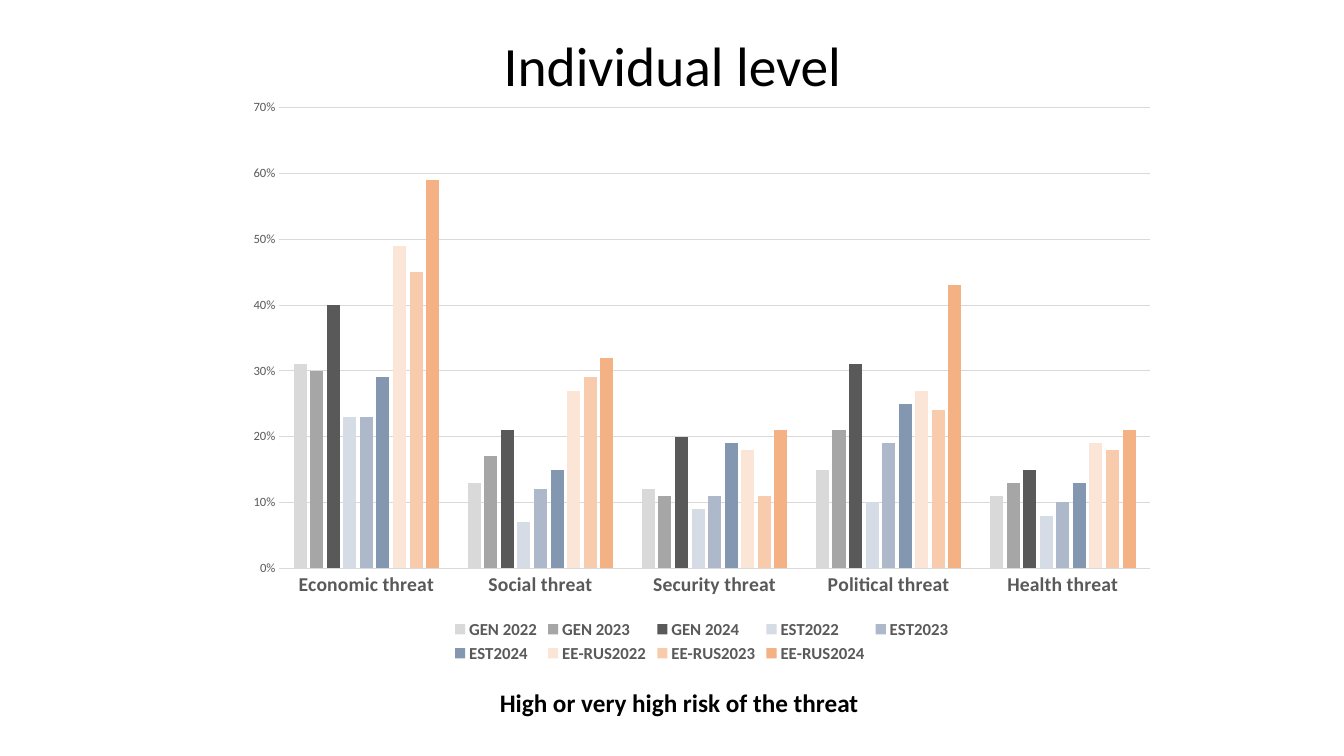
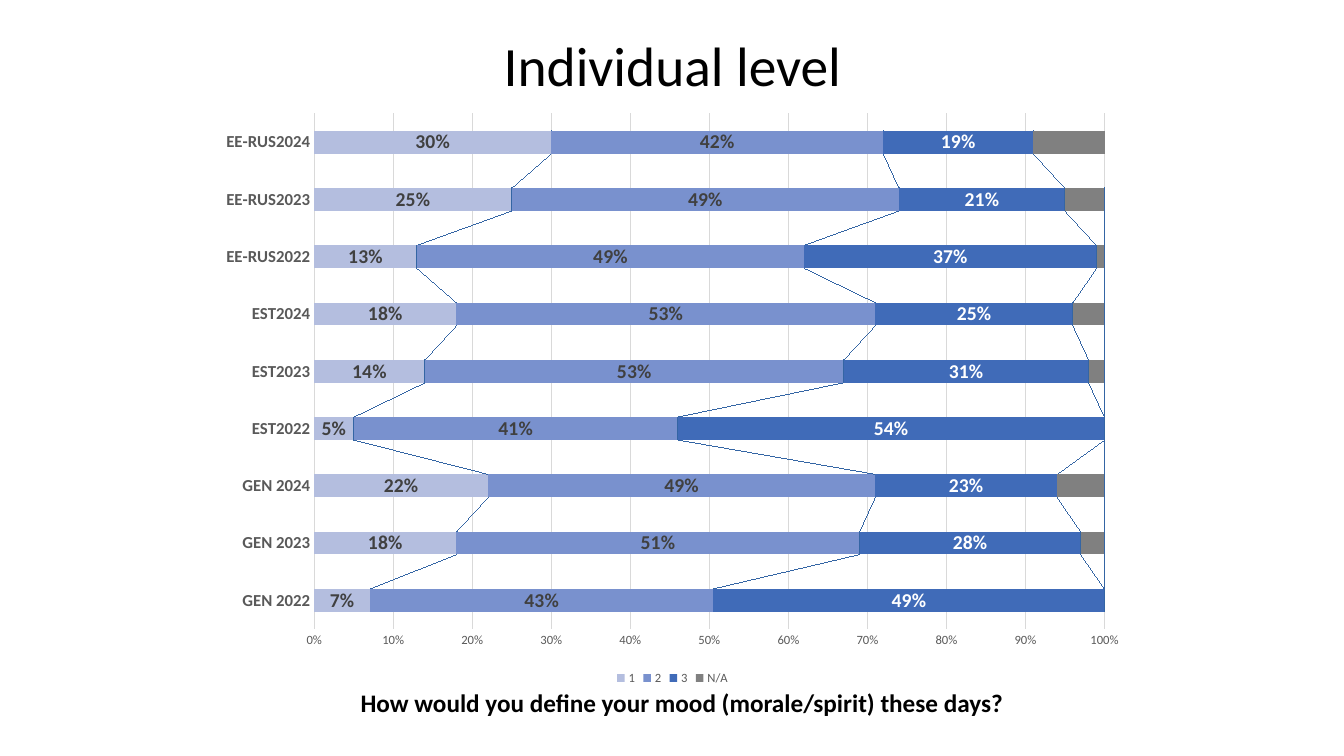
"""Build two slides that chart threat perception and mood at the individual level."""
from lxml import etree
from pptx import Presentation
from pptx.chart.data import CategoryChartData
from pptx.dml.color import RGBColor
from pptx.enum.chart import XL_CHART_TYPE, XL_LEGEND_POSITION, XL_TICK_MARK
from pptx.enum.text import MSO_ANCHOR, MSO_AUTO_SIZE, PP_ALIGN
from pptx.oxml import parse_xml
from pptx.oxml.ns import nsdecls, qn
from pptx.util import Inches, Pt

COLUMNS = XL_CHART_TYPE.COLUMN_CLUSTERED
STACKED_BARS = XL_CHART_TYPE.BAR_STACKED_100
LEGEND_BOTTOM = XL_LEGEND_POSITION.BOTTOM
NO_TICK = XL_TICK_MARK.NONE
MIDDLE, TOP = MSO_ANCHOR.MIDDLE, MSO_ANCHOR.TOP
GROW = MSO_AUTO_SIZE.SHAPE_TO_FIT_TEXT
CENTER = PP_ALIGN.CENTER

FONT = "Calibri"
PERCENT = "0%"
BLACK = RGBColor(0x00, 0x00, 0x00)
WHITE = RGBColor(0xFF, 0xFF, 0xFF)
AXIS_TEXT = RGBColor(0x59, 0x59, 0x59)
LABEL_DARK = RGBColor(0x40, 0x40, 0x40)
GRID = RGBColor(0xD9, 0xD9, 0xD9)
SERIES_LINE = RGBColor(0x2E, 0x62, 0xA6)

GROUP_COLORS = {
    "GEN ": (GRID, RGBColor(0xA6, 0xA6, 0xA6), AXIS_TEXT),
    "EST": (RGBColor(0xD6, 0xDC, 0xE5), RGBColor(0xAD, 0xB9, 0xCA), RGBColor(0x84, 0x97, 0xB0)),
    "EE-RUS": (RGBColor(0xFB, 0xE5, 0xD6), RGBColor(0xF8, 0xCB, 0xAD), RGBColor(0xF4, 0xB1, 0x83)),
}
YEARS = (2022, 2023, 2024)
WAVES = [f"{group}{year}" for group in GROUP_COLORS for year in YEARS]
WAVE_COLORS = [color for colors in GROUP_COLORS.values() for color in colors]

THREATS = ["Economic threat", "Social threat", "Security threat",
           "Political threat", "Health threat"]
THREAT_VALUES = [
    (0.31, 0.13, 0.12, 0.15, 0.11),
    (0.30, 0.17, 0.11, 0.21, 0.13),
    (0.40, 0.21, 0.20, 0.31, 0.15),
    (0.23, 0.07, 0.09, 0.10, 0.08),
    (0.23, 0.12, 0.11, 0.19, 0.10),
    (0.29, 0.15, 0.19, 0.25, 0.13),
    (0.49, 0.27, 0.18, 0.27, 0.19),
    (0.45, 0.29, 0.11, 0.24, 0.18),
    (0.59, 0.32, 0.21, 0.43, 0.21),
]
MOODS = ["1", "2", "3", "N/A"]
MOOD_VALUES = [
    (0.07, 0.18, 0.22, 0.05, 0.14, 0.18, 0.13, 0.25, 0.30),
    (0.43, 0.51, 0.49, 0.41, 0.53, 0.53, 0.49, 0.49, 0.42),
    (0.49, 0.28, 0.23, 0.54, 0.31, 0.25, 0.37, 0.21, 0.19),
    (0, 0.03, 0.06, 0, 0.02, 0.04, 0.01, 0.05, 0.09),
]
MOOD_COLORS = [RGBColor(0xB4, 0xBE, 0xDF), RGBColor(0x79, 0x91, 0xCE),
               RGBColor(0x40, 0x6B, 0xB8), RGBColor(0x80, 0x80, 0x80)]
MOOD_LABEL_COLORS = [LABEL_DARK, LABEL_DARK, WHITE]


class Deck:
    """Hold the shared style and the current slide."""

    def __init__(self):
        self.presentation = Presentation()
        self.presentation.slide_width = Inches(13.33)
        self.presentation.slide_height = Inches(7.5)
        self.slide = None

    def add_slide(self, title, caption):
        """Start a slide with its title and caption."""
        self.slide = self.presentation.slides.add_slide(self.presentation.slide_layouts[6])
        frame = self.add_text(title, (0.92, 0.4, 11.5, 0.55), 39.6, anchor=MIDDLE)
        frame.paragraphs[0].line_spacing = 0.9
        frame = self.add_text(caption, (3.43, 6.77, 6.67, 0.4), 18, bold=True)
        frame.auto_size = GROW

    def style_font(self, font, size, color, bold=False):
        """Apply the shared typeface with a size and colour."""
        font.name, font.size, font.bold = FONT, Pt(size), bold
        font.color.rgb = color

    def add_text(self, text, box, size, bold=False, anchor=TOP):
        """Add a centred line of text and return its frame."""
        shape = self.slide.shapes.add_textbox(*map(Inches, box))
        frame = shape.text_frame
        frame.word_wrap = True
        frame.vertical_anchor = anchor
        paragraph = frame.paragraphs[0]
        paragraph.alignment = CENTER
        run = paragraph.add_run()
        run.text = text
        self.style_font(run.font, size, BLACK, bold)
        return frame

    def add_bar_chart(self, kind, box, categories, names, values, colors, gap, overlap,
                      value_max, category_size, legend_size, legend_bold):
        """Add a percentage bar chart with a legend below it."""
        data = CategoryChartData(number_format=PERCENT)
        data.categories = categories
        for name, numbers in zip(names, values):
            data.add_series(name, numbers)
        chart = self.slide.shapes.add_chart(kind, *map(Inches, box), data).chart
        chart.has_title = False
        self.style_font(chart.font, 10, BLACK)
        chart.has_legend = True
        chart.legend.position = LEGEND_BOTTOM
        chart.legend.include_in_layout = False
        self.style_font(chart.legend.font, legend_size, AXIS_TEXT, legend_bold)
        self.style_axes(chart, value_max, category_size)
        plot = chart.plots[0]
        plot.vary_by_categories = False
        plot.gap_width, plot.overlap = gap, overlap
        for series, color in zip(plot.series, colors):
            series.format.fill.solid()
            series.format.fill.fore_color.rgb = color
            series.invert_if_negative = False
        return plot

    def style_axes(self, chart, value_max, category_size):
        """Style both axes and the gridlines."""
        category_axis, value_axis = chart.category_axis, chart.value_axis
        for axis in (category_axis, value_axis):
            axis.major_tick_mark = axis.minor_tick_mark = NO_TICK
        self.style_font(category_axis.tick_labels.font, category_size, AXIS_TEXT, True)
        self.style_font(value_axis.tick_labels.font, 9, AXIS_TEXT)
        value_axis.has_major_gridlines = True
        for line in (category_axis.format.line, value_axis.major_gridlines.format.line):
            line.color.rgb = GRID
            line.width = Pt(0.75)
        value_axis.format.line.fill.background()
        value_axis.minimum_scale, value_axis.maximum_scale = 0, value_max
        value_axis.major_unit = 0.1
        value_axis.tick_labels.number_format = PERCENT
        value_axis.tick_labels.number_format_is_linked = False

    def add_labels(self, plot, colors):
        """Show values on the leading series, one colour each."""
        for series, color in zip(plot.series, colors):
            labels = series.data_labels
            labels.show_value = True
            labels.number_format = PERCENT
            labels.number_format_is_linked = False
            self.style_font(labels.font, 14, color, True)

    def add_series_lines(self, plot):
        """Join the ends of neighbouring stacked bars."""
        lines = parse_xml(f"<c:serLines {nsdecls('c', 'a')}><c:spPr/></c:serLines>")
        outline = etree.SubElement(lines[0], qn("a:ln"), w=str(Pt(0.75)))
        fill = etree.SubElement(outline, qn("a:solidFill"))
        etree.SubElement(fill, qn("a:srgbClr"), val=str(SERIES_LINE))
        plot._element.find(qn("c:overlap")).addnext(lines)


def main():
    """Build and save the presentation."""
    deck = Deck()
    deck.add_slide("Individual level", "High or very high risk of the threat ")
    deck.add_bar_chart(COLUMNS, (2.33, 0.88, 9.26, 5.74), THREATS, WAVES, THREAT_VALUES,
                       WAVE_COLORS, gap=219, overlap=-27, value_max=0.7,
                       category_size=14, legend_size=12, legend_bold=True)

    deck.add_slide("Individual level",
                   "How would you define your mood (morale/spirit) these days?")
    plot = deck.add_bar_chart(STACKED_BARS, (2.06, 1.01, 9.22, 5.83), WAVES, MOODS,
                              MOOD_VALUES, MOOD_COLORS, gap=150, overlap=100, value_max=1,
                              category_size=12, legend_size=9, legend_bold=False)
    deck.add_labels(plot, MOOD_LABEL_COLORS)
    deck.add_series_lines(plot)
    deck.presentation.save("out.pptx")


if __name__ == "__main__":
    main()
